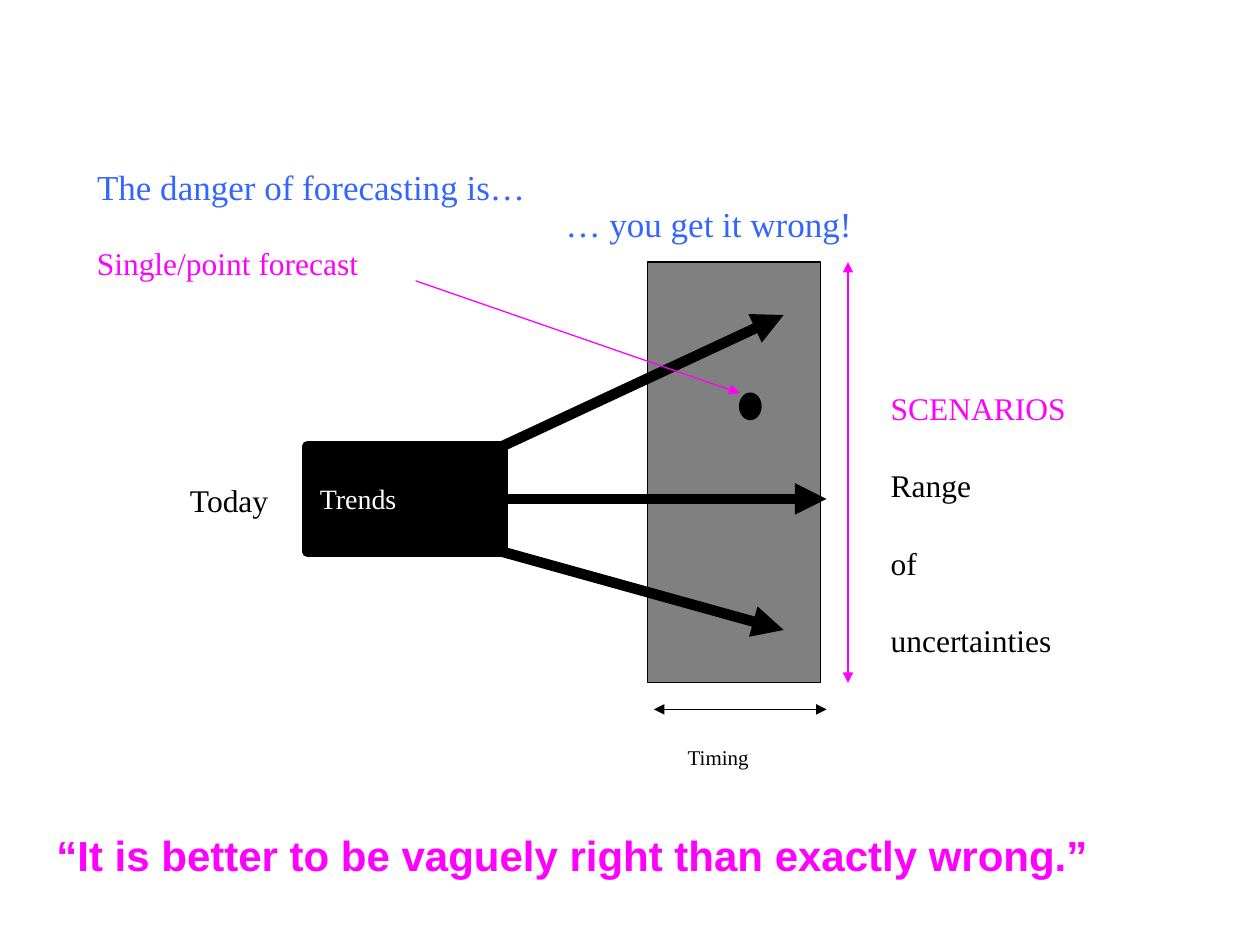
from lxml import etree
from pptx import Presentation
from pptx import util as u
from pptx.dml.color import RGBColor
from pptx.enum import shapes, text
from pptx.oxml.ns import qn

BLACK, WHITE, GREY = "000000", "FFFFFF", "808080"
MAGENTA, BLUE = "FF00FF", "3366FF"
SERIF = "Times New Roman"
RIGHT_SIDE = 3
TREND_LINE = 6


def colour(value):
    return RGBColor.from_string(value)


def inches(*lengths):
    return [u.Inches(length) for length in lengths]


def add_block(slide, kind, box, fill, line_width=0.75):
    block = slide.shapes.add_shape(kind, *inches(*box))
    block.shadow.inherit = False
    block.fill.solid()
    block.fill.fore_color.rgb = colour(fill)
    block.line.color.rgb = colour(BLACK)
    block.line.width = u.Pt(line_width)
    return block


def write(label, lines, size, font=SERIF, bold=False, gap=0):
    """Fill a label with (words, colour) lines, gap points apart."""
    frame = label.text_frame
    layout = {
        "word_wrap": True,
        "auto_size": text.MSO_AUTO_SIZE.NONE,
        "vertical_anchor": text.MSO_ANCHOR.TOP,
        "margin_left": u.Inches(0.1),
        "margin_right": u.Inches(0.1),
        "margin_top": u.Inches(0.07),
        "margin_bottom": u.Inches(0.05),
    }
    for name, value in layout.items():
        setattr(frame, name, value)
    for index, (words, ink) in enumerate(lines):
        paragraph = frame.add_paragraph() if index else frame.paragraphs[0]
        paragraph.text = words
        paragraph.alignment = text.PP_ALIGN.LEFT
        paragraph.space_before = u.Pt(gap if index else 0)
        for name, value in {"name": font, "size": u.Pt(size), "bold": bold}.items():
            setattr(paragraph.font, name, value)
        paragraph.font.color.rgb = colour(ink)


def add_label(slide, box, lines, size, fill=WHITE, **style):
    label = slide.shapes.add_textbox(*inches(*box))
    if fill:
        label.fill.solid()
        label.fill.fore_color.rgb = colour(fill)
    write(label, lines, size, **style)


def add_title(slide, box, words):
    title = slide.shapes.title
    title.left, title.top, title.width, title.height = inches(*box)
    write(title, [(words, BLUE)], 20)


def add_arrow(slide, start, end, ink=BLACK, width=0.75, both_ends=False):
    arrow = slide.shapes.add_connector(
        shapes.MSO_CONNECTOR.STRAIGHT, *inches(*start, *end))
    arrow.line.color.rgb = colour(ink)
    arrow.line.width = u.Pt(width)
    line = arrow.line._get_or_add_ln()
    for tag in ["a:headEnd", "a:tailEnd"] if both_ends else ["a:tailEnd"]:
        etree.SubElement(line, qn(tag), type="triangle")
    etree.SubElement(arrow._element.spPr, qn("a:effectLst"))
    return arrow


def add_trends(slide):
    left, top, width, height = 2.44, 3.54, 1.55, 0.84
    right, middle, bottom = left + width, top + height / 2, top + height
    trends = add_block(slide, shapes.MSO_SHAPE.RECTANGLE,
                       (left, top, width, height), BLACK, TREND_LINE)
    add_arrow(slide, (right, top), (6.22, 2.5), width=TREND_LINE)
    steady = add_arrow(slide, (right, middle), (6.56, middle), width=TREND_LINE)
    steady.begin_connect(trends, RIGHT_SIDE)
    add_arrow(slide, (right, bottom), (6.22, 5), width=TREND_LINE)
    add_label(slide, (left, 3.75, 0.86, 0.42), [("Trends", WHITE)], 16, BLACK)


def main():
    presentation = Presentation()
    presentation.slide_width, presentation.slide_height = inches(10, 7.5)
    slide = presentation.slides.add_slide(presentation.slide_layouts[5])

    add_title(slide, (0.67, 1.24, 3.78, 0.42), "The danger of forecasting is…")
    add_label(slide, (4.39, 1.54, 2.92, 0.42),
              [("… you get it wrong!", BLUE)], 20, fill=None)

    panel_top, panel_height = 2.08, 3.34
    add_block(slide, shapes.MSO_SHAPE.RECTANGLE,
              (5.14, panel_top, 1.37, panel_height), GREY)
    add_trends(slide)
    add_label(slide, (1.41, 3.75, 0.86, 0.42), [("Today", BLACK)], 18)

    add_arrow(slide, (2.87, 2.08), (5.87, 3.12), MAGENTA)
    add_label(slide, (0.67, 1.87, 2.63, 0.42),
              [("Single/point forecast", MAGENTA)], 18)
    add_block(slide, shapes.MSO_SHAPE.OVAL, (5.87, 3.12, 0.17, 0.21), BLACK)

    add_arrow(slide, (5.19, 5.63), (6.56, 5.63), both_ends=True)
    add_label(slide, (5.36, 5.84, 0.86, 0.42), [("Timing", BLACK)], 12)

    add_arrow(slide, (6.73, panel_top), (6.73, panel_top + panel_height),
              MAGENTA, both_ends=True)
    add_label(slide, (6.97, 3.02, 1.72, 2.36),
              [("SCENARIOS", MAGENTA), ("Range", BLACK),
               ("of", BLACK), ("uncertainties", BLACK)], 18, gap=22.5)

    add_label(slide, (0.35, 6.51, 8.74, 0.51),
              [("“It is better to be vaguely right than exactly wrong.”", MAGENTA)],
              24, font="Arial", bold=True)
    presentation.save("out.pptx")


if __name__ == "__main__":
    main()
